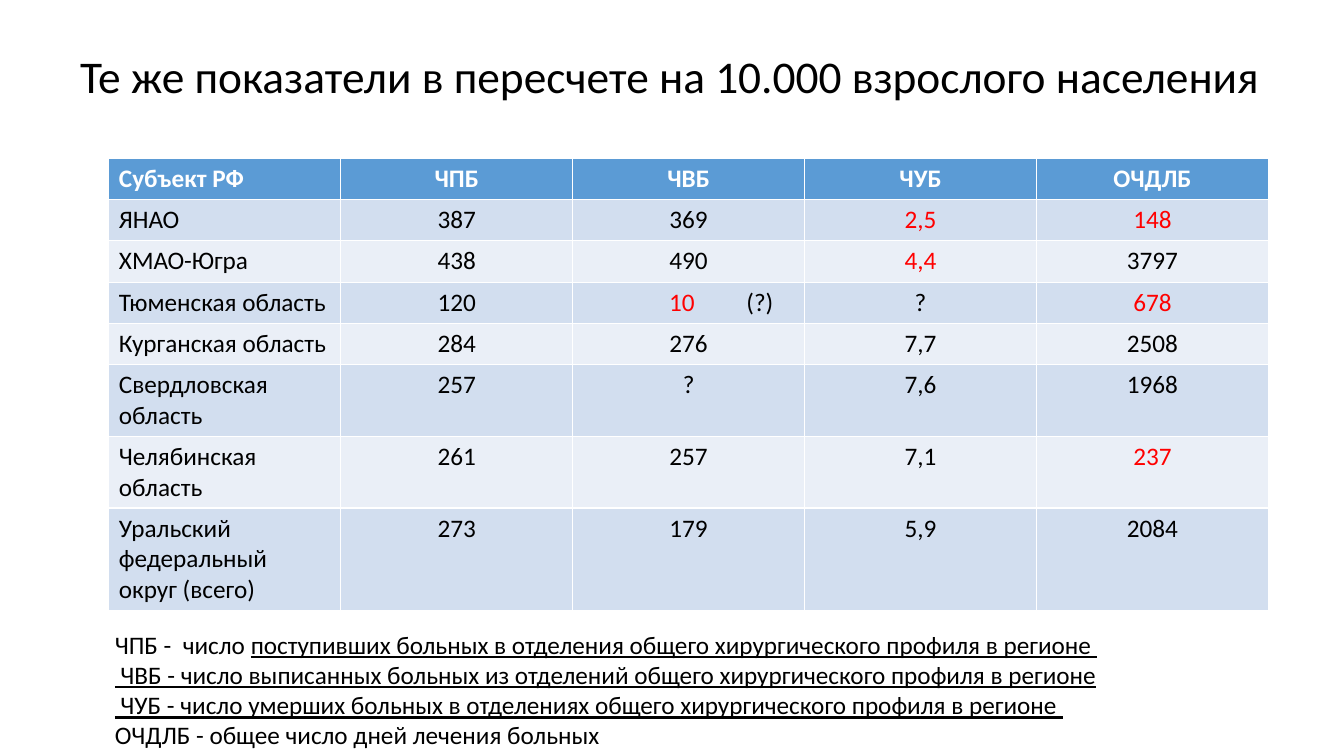
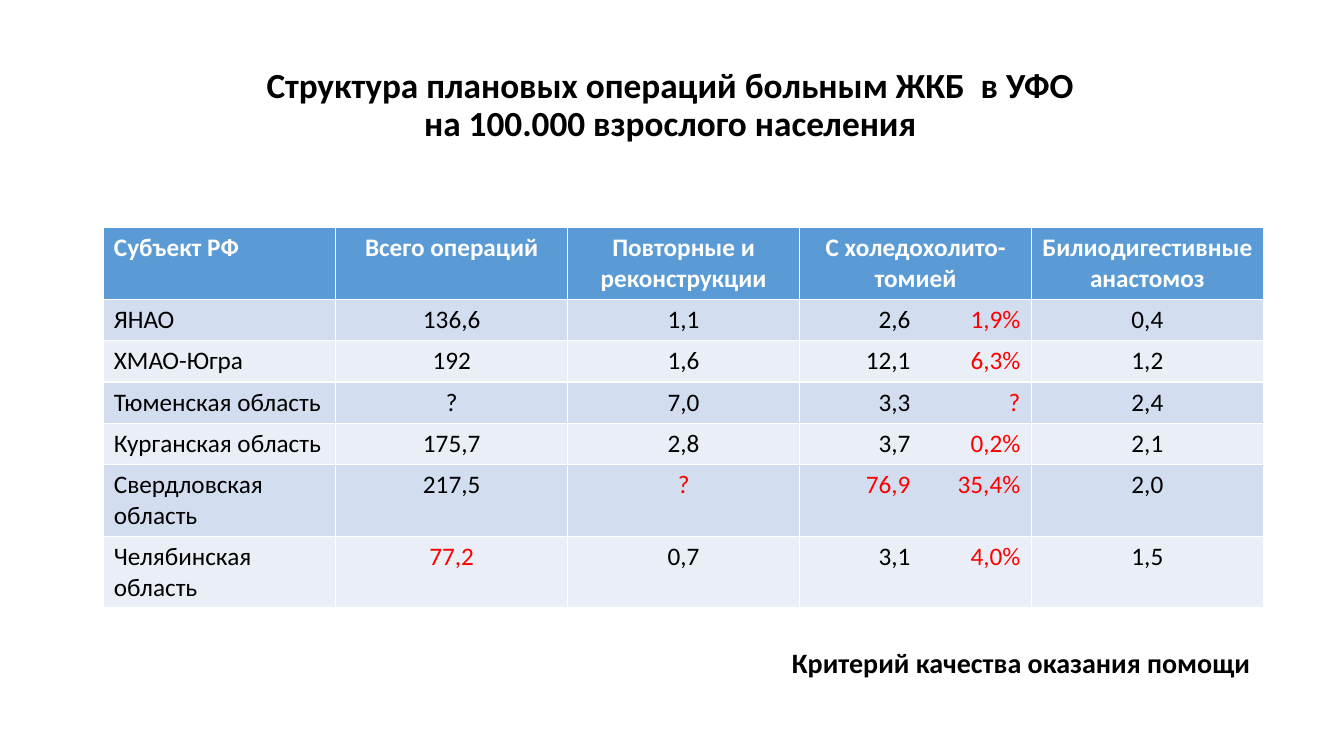
from dataclasses import dataclass

from lxml import etree
from pptx import Presentation
from pptx.dml.color import RGBColor
from pptx.enum.text import MSO_ANCHOR, MSO_AUTO_SIZE, PP_ALIGN
from pptx.oxml.ns import qn
from pptx.util import Inches, Pt

LEFT, CENTER, RIGHT = PP_ALIGN.LEFT, PP_ALIGN.CENTER, PP_ALIGN.RIGHT
MIDDLE = MSO_ANCHOR.MIDDLE
NO_AUTOFIT = MSO_AUTO_SIZE.NONE
TITLE_ONLY = 5
ALERT = "!"  # a value that starts with this mark is shown in red


@dataclass(frozen=True)
class Theme:
    font: str = "Calibri"
    text: RGBColor = RGBColor(0, 0, 0)
    alert: RGBColor = RGBColor(0xFF, 0, 0)
    header_text: RGBColor = RGBColor(0xFF, 0xFF, 0xFF)
    header_fill: RGBColor = RGBColor(0x5B, 0x9B, 0xD5)
    bands: tuple = (RGBColor(0xD2, 0xDE, 0xEF), RGBColor(0xEA, 0xEF, 0xF7))
    title_size: float = 32.4
    long_title_size: float = 25.2
    criterion_size: float = 20
    body_size: float = 18
    column_width: float = 2.3
    row_height: float = 0.41


class Deck:
    """Holds the theme and the slide being built."""

    def __init__(self, theme):
        self.theme = theme
        self.presentation = Presentation()
        self.presentation.slide_width = Inches(13.33)
        self.presentation.slide_height = Inches(7.5)
        self.slide = None

    def add_slide(self):
        layout = self.presentation.slide_layouts[TITLE_ONLY]
        self.slide = self.presentation.slides.add_slide(layout)

    def style(self, paragraph, size, color=None, bold=False, align=LEFT):
        paragraph.alignment = align
        font = paragraph.font
        font.name, font.size, font.bold = self.theme.font, Pt(size), bold
        font.color.rgb = color or self.theme.text

    def title(self, text, left, top, width, height, size, bold=False):
        shape = self.slide.shapes.title
        shape.left, shape.top = Inches(left), Inches(top)
        shape.width, shape.height = Inches(width), Inches(height)
        frame = shape.text_frame
        frame.auto_size, frame.vertical_anchor = NO_AUTOFIT, MIDDLE
        frame.text = text
        paragraph = frame.paragraphs[0]
        paragraph.line_spacing = 0.9
        self.style(paragraph, size, bold=bold, align=CENTER)

    def text(self, lines, left, top, width, height, size, bold=False, align=LEFT):
        """Each line is a list of (text, underlined) runs."""
        box = self.slide.shapes.add_textbox(
            Inches(left), Inches(top), Inches(width), Inches(height))
        frame = box.text_frame
        frame.word_wrap = True
        for index, runs in enumerate(lines):
            paragraph = frame.add_paragraph() if index else frame.paragraphs[0]
            self.style(paragraph, size, bold=bold, align=align)
            for text, underlined in runs:
                run = paragraph.add_run()
                run.text = text
                if underlined:
                    run.font.underline = True

    def table(self, header, rows, left, top, tab_stops):
        theme = self.theme
        height = theme.row_height * (len(rows) + 1)
        table = self.slide.shapes.add_table(
            len(rows) + 1, len(header), Inches(left), Inches(top),
            Inches(theme.column_width * len(header)), Inches(height)).table
        for column in table.columns:
            column.width = Inches(theme.column_width)
        for row_index, values in enumerate([header, *rows]):
            table.rows[row_index].height = Inches(theme.row_height)
            is_header = row_index == 0
            fill = theme.header_fill if is_header else theme.bands[(row_index - 1) % 2]
            for column_index, value in enumerate(values):
                cell = table.cell(row_index, column_index)
                cell.fill.solid()
                cell.fill.fore_color.rgb = fill
                self.cell_text(cell, value, is_header, column_index == 0, tab_stops)

    def cell_text(self, cell, value, is_header, is_first, tab_stops):
        """A tuple of values is set out on right-aligned tab stops."""
        paragraph = cell.text_frame.paragraphs[0]
        is_pair = isinstance(value, tuple)
        if is_pair:
            properties = paragraph._p.get_or_add_pPr()
            tab_list = etree.SubElement(properties, qn("a:tabLst"))
            for stop in tab_stops:
                etree.SubElement(tab_list, qn("a:tab"), pos=str(Inches(stop)), algn="r")
        color = self.theme.header_text if is_header else self.theme.text
        align = LEFT if is_first or is_pair else CENTER
        self.style(paragraph, self.theme.body_size, color, is_header, align)
        for part in value if is_pair else (value,):
            run = paragraph.add_run()
            run.text = ("\t" if is_pair else "") + part.removeprefix(ALERT)
            if part.startswith(ALERT):
                run.font.color.rgb = self.theme.alert


def main():
    theme = Theme()
    deck = Deck(theme)

    # Rates per 10.000 adults
    deck.add_slide()
    deck.title("Те же показатели в пересчете на 10.000 взрослого населения",
               0.35, 0.4, 12.59, 0.77, theme.title_size)
    deck.table(
        ["Субъект РФ", "ЧПБ", "ЧВБ", "ЧУБ", "ОЧДЛБ"],
        [
            ["ЯНАО", "387", "369", "!2,5", "!148"],
            ["ХМАО-Югра", "438", "490", "!4,4", "3797"],
            ["Тюменская область", "120", ("!10", "(?)"), "?", "!678"],
            ["Курганская область", "284", "276", "7,7", "2508"],
            ["Свердловская область", "257", "?", "7,6", "1968"],
            ["Челябинская область", "261", "257", "7,1", "!237"],
            ["Уральский федеральный округ (всего)", "273", "179", "5,9", "2084"],
        ],
        1.08, 1.57, tab_stops=(1.11, 1.89))
    deck.text(
        [
            [("ЧПБ -  число ", False),
             ("поступивших больных в отделения общего хирургического профиля в регионе ", True)],
            [(" ЧВБ - число выписанных больных из отделений общего хирургического профиля в регионе", True)],
            [(" ЧУБ - число умерших больных в отделениях общего хирургического профиля в регионе ", True)],
            [("ОЧДЛБ - общее число дней лечения больных", False)],
        ],
        1.04, 6.19, 11.51, 1.31, theme.body_size)

    # Planned operations per 100.000 adults
    deck.add_slide()
    deck.title("Структура плановых операций больным ЖКБ  в УФО\vна 100.000 взрослого населения",
               0.9, 0.62, 11.5, 0.86, theme.long_title_size, bold=True)
    deck.table(
        ["Субъект РФ", "Всего операций", "Повторные и реконструкции",
         "С холедохолито-томией", "Билиодигестивные анастомоз"],
        [
            ["ЯНАО", "136,6", "1,1", ("2,6", "!1,9%"), "0,4"],
            ["ХМАО-Югра", "192", "1,6", ("12,1", "!6,3%"), "1,2"],
            ["Тюменская область", "?", "7,0", ("3,3", "!?"), "2,4"],
            ["Курганская область", "175,7", "2,8", ("3,7", "!0,2%"), "2,1"],
            ["Свердловская область", "217,5", "!?", ("!76,9", "!35,4%"), "2,0"],
            ["Челябинская область", "!77,2", "0,7", ("3,1", "!4,0%"), "1,5"],
        ],
        1.03, 2.26, tab_stops=(1, 2.09))
    deck.text([[("Критерий качества оказания помощи", False)]],
              6.38, 6.35, 6.12, 0.44, theme.criterion_size, bold=True, align=RIGHT)

    deck.presentation.save("out.pptx")


if __name__ == "__main__":
    main()
